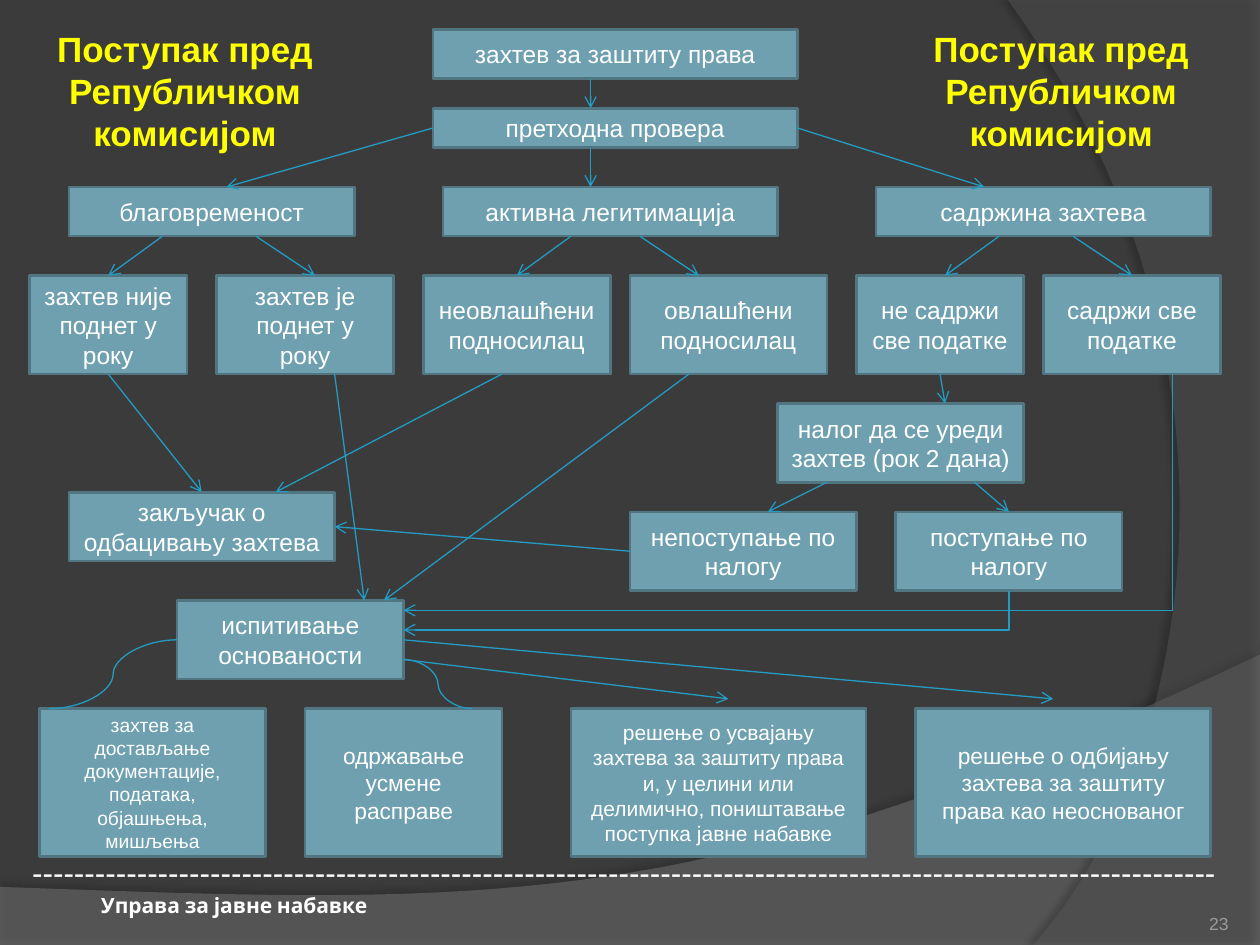
from lxml import etree
from pptx import Presentation
from pptx.dml.color import RGBColor
from pptx.enum.shapes import MSO_CONNECTOR, MSO_SHAPE
from pptx.enum.text import MSO_ANCHOR, MSO_AUTO_SIZE, PP_ALIGN
from pptx.oxml.ns import qn
from pptx.util import Inches, Pt

STRAIGHT, ELBOW, CURVE = MSO_CONNECTOR.STRAIGHT, MSO_CONNECTOR.ELBOW, MSO_CONNECTOR.CURVE
RECTANGLE = MSO_SHAPE.RECTANGLE
TOP, MIDDLE, BOTTOM = MSO_ANCHOR.TOP, MSO_ANCHOR.MIDDLE, MSO_ANCHOR.BOTTOM
LEFT, CENTER, RIGHT = PP_ALIGN.LEFT, PP_ALIGN.CENTER, PP_ALIGN.RIGHT
NO_FIT = MSO_AUTO_SIZE.NONE

WIDTH, HEIGHT = Inches(10), Inches(7.5)
COLUMNS, ROWS = 128, 96
COLORS = {
    "ground": "3B3B3B", "wave": "7F7F7F", "arc": "5E5E5E", "shade": "000000",
    "box": "6EA0B0", "edge": "517682", "link": "239BC2",
    "text": "FFFFFF", "heading": "FFFF00", "number": "9D9B9A",
}
SITES = {"top": 0, "left": 1, "bottom": 2, "right": 3}

STAGES = [
    ((44, 3, 37, 12), [
        ("request", "захтев за заштиту права", (0, 0, 37, 5), 14),
        ("precheck", "претходна провера", (0, 8, 37, 4), 14)]),
    ((3, 19, 37, 19), [
        ("timing", "благовременост", (4, 0, 29, 5), 14),
        ("late", "захтев није поднет у року", (0, 9, 16, 10), 14),
        ("timely", "захтев је поднет у року", (19, 9, 18, 10), 14)]),
    ((43, 19, 41, 19), [
        ("standing", "активна легитимација", (2, 0, 34, 5), 14),
        ("unauthorised", "неовлашћени подносилац", (0, 9, 19, 10), 14),
        ("authorised", "овлашћени подносилац", (21, 9, 20, 10), 14)]),
    ((87, 19, 37, 19), [
        ("content", "садржина захтева", (2, 0, 34, 5), 14),
        ("incomplete", "не садржи све податке", (0, 9, 17, 10), 14),
        ("complete", "садржи све податке", (19, 9, 18, 10), 14)]),
    ((64, 41, 50, 19), [
        ("order", "налог да се уреди захтев (рок 2 дана)", (15, 0, 25, 8), 14),
        ("ignored", "непоступање по налогу", (0, 11, 23, 8), 14),
        ("obeyed", "поступање по налогу", (27, 11, 23, 8), 14)]),
    ((7, 50, 34, 19), [
        ("rejection", "закључак о одбацивању захтева", (0, 0, 27, 7), 14),
        ("review", "испитивање основаности", (11, 11, 23, 8), 14)]),
    ((4, 72, 119, 15), [
        ("documents", "захтев за достављање документације, података, објашњења, мишљења",
         (0, 0, 23, 15), 11),
        ("hearing", "одржавање усмене расправе", (27, 0, 20, 15), 13),
        ("granted", "решење о усвајању захтева за заштиту права и, у целини или "
         "делимично, поништавање поступка јавне набавке", (54, 0, 30, 15), 12),
        ("refused", "решење о одбијању захтева за заштиту права као неоснованог",
         (89, 0, 30, 15), 13)]),
]

ARROWS = [
    (("request", "bottom", 16), ("precheck", "top", 16)),
    (("precheck", "bottom", 16), ("standing", "top", 15)),
    (("precheck", "left", None), ("timing", "top", 16)),
    (("precheck", "right", None), ("content", "top", 11)),
    (("timing", "bottom", 9.5), ("late", "top", None)),
    (("timing", "bottom", 19), ("timely", "top", 10)),
    (("standing", "bottom", 13), ("unauthorised", "top", None)),
    (("standing", "bottom", 20), ("authorised", "top", 7)),
    (("content", "bottom", 12.5), ("incomplete", "top", 9)),
    (("content", "bottom", 20), ("complete", "top", None)),
    (("late", "bottom", None), ("rejection", "top", None)),
    (("unauthorised", "bottom", 8), ("rejection", "top", 21)),
    (("ignored", "left", None), ("rejection", "right", None)),
    (("timely", "bottom", 12), ("review", "top", 19)),
    (("authorised", "bottom", 6), ("review", "top", 21)),
    (("incomplete", "bottom", None), ("order", "top", 17)),
    (("order", "bottom", 5), ("ignored", "top", 14)),
    (("order", "bottom", 20), ("obeyed", "top", None)),
    (("review", "right", 6), ("granted", "above", 16)),
    (("review", "right", None), ("refused", "above", 14)),
]
ELBOWS = [
    (("review", "right", 1), ("complete", "bottom", 13.1)),
    (("review", "right", 3), ("obeyed", "bottom", 11.5)),
]
CURVES = [
    (("review", "right", 6), ("hearing", "top", 17)),
    (("review", "left", 4), ("documents", "top", 1)),
]


def across(columns):
    return round(WIDTH * columns / COLUMNS)


def down(rows):
    return round(HEIGHT * rows / ROWS)


def within(area, cell):
    left, top, width, height = cell
    return across(area[0] + left), down(area[1] + top), across(width), down(height)


def color(name):
    return RGBColor.from_string(COLORS[name])


def apply(target, values):
    for key, value in values.items():
        setattr(target, key, value)


def write(box, text, size, shade="text", font="Arial", bold=False, align=CENTER, **frame):
    apply(box.text_frame, {"word_wrap": True, "auto_size": NO_FIT, **frame})
    para = box.text_frame.paragraphs[0]
    para.alignment = align
    span = para.add_run()
    span.text = text
    apply(span.font, {"name": font, "size": Pt(size), "bold": bold})
    span.font.color.rgb = color(shade)


def bezier(start, first, second, end, steps=40):
    for step in range(steps + 1):
        t = step / steps
        weights = ((1 - t) ** 3, 3 * t * (1 - t) ** 2, 3 * t * t * (1 - t), t ** 3)
        yield tuple(sum(weight * point[axis] for weight, point
                        in zip(weights, (start, first, second, end))) for axis in (0, 1))


def draw_panel(page, area, shares, fill, opacity, shadow):
    left, top, width, height = within((0, 0), area)
    points = [(left + width * x, top + height * y) for x, y in shares]
    builder = page.shapes.build_freeform(*points[0], scale=1.0)
    builder.add_line_segments(points[1:], close=True)
    panel = builder.convert_to_shape()
    panel.fill.solid()
    panel.fill.fore_color.rgb = color(fill)
    panel.line.fill.background()
    panel.shadow.inherit = False
    properties = panel._element.spPr
    tint = properties.find(qn("a:solidFill"))[0]
    etree.SubElement(tint, qn("a:alpha"), val=str(opacity * 1000))
    strength, blur, distance, angle = shadow
    cast = etree.SubElement(properties.find(qn("a:effectLst")), qn("a:outerShdw"),
                            blurRad=str(Pt(blur)), dist=str(Pt(distance)),
                            dir=str(angle * 60000), algn="ctr", rotWithShape="0")
    shade = etree.SubElement(cast, qn("a:srgbClr"), val=COLORS["shade"])
    etree.SubElement(shade, qn("a:alpha"), val=str(strength * 1000))


def draw_backdrop(page):
    page.background.fill.solid()
    page.background.fill.fore_color.rgb = color("ground")
    wave = [(0, 1), (1, 1), *bezier((1, 0), (0.56, 0.91), (0.39, 0.86), (0, 0.8))]
    arc = [(1, 0), (1, 1), *bezier((0.1, 1), (0.68, 0.83), (1.09, 0.4), (0, 0))]
    draw_panel(page, (0, 66.5, 128, 29.5), wave, "wave", 45, (35, 4, 3.5, 270))
    draw_panel(page, (102.4, 0, 25.6, 96), arc, "arc", 40, (45, 4, 4, 180))


def draw_heading(page, area):
    box = page.shapes.add_textbox(*within(area, (0, 0, *area[2:])))
    write(box, "Поступак пред Републичком комисијом", 20, "heading", bold=True,
          vertical_anchor=BOTTOM)


def draw_stage(page, area, nodes):
    boxes = {}
    for name, text, cell, size in nodes:
        box = page.shapes.add_shape(RECTANGLE, *within(area, cell))
        box.shadow.inherit = False
        box.fill.solid()
        box.fill.fore_color.rgb = color("box")
        box.line.color.rgb = color("edge")
        box.line.width = Pt(1.5)
        write(box, text, size, vertical_anchor=MIDDLE)
        boxes[name] = box
    return boxes


def locate(box, side, offset):
    if side in ("left", "right"):
        shift = box.height // 2 if offset is None else down(offset)
        return box.left + (box.width if side == "right" else 0), box.top + shift
    shift = box.width // 2 if offset is None else across(offset)
    drop = {"top": 0, "above": -down(1), "bottom": box.height}[side]
    return box.left + shift, box.top + drop


def draw_link(page, boxes, start, end, kind=STRAIGHT, arrow=None):
    ends = [(boxes[name], side, offset) for name, side, offset in (start, end)]
    points = [value for place in ends for value in locate(*place)]
    link = page.shapes.add_connector(kind, *points)
    for join, (box, side, offset) in zip((link.begin_connect, link.end_connect), ends):
        if offset is None:
            join(box, SITES[side])
    link.line.color.rgb = color("link")
    link.line.width = Pt(0.75)
    properties = link._element.spPr
    if arrow:
        etree.SubElement(properties.find(qn("a:ln")), qn(arrow), type="arrow")
    if kind == ELBOW:
        properties.find(qn("a:prstGeom")).set("prst", "bentConnector2")
    etree.SubElement(properties, qn("a:effectLst"))


def draw_footer(page, area):
    rule, office, number = (page.shapes.add_textbox(*within(area, cell)) for cell in (
        (0, 0, 123.3, 5), (7, 4, 40, 4), (112.2, 3.9, 10.6, 5)))
    write(rule, "-" * 113, 18, align=LEFT, word_wrap=False)
    write(office, "Управа за јавне набавке", 12, font="Cabin", bold=True, align=LEFT,
          vertical_anchor=TOP)
    margins = dict.fromkeys(("margin_left", "margin_top", "margin_right", "margin_bottom"), 0)
    write(number, "23", 10, "number", align=RIGHT, vertical_anchor=BOTTOM, **margins)


def main():
    deck = Presentation()
    deck.slide_width, deck.slide_height = WIDTH, HEIGHT
    page = deck.slides.add_slide(deck.slide_layouts[6])
    draw_backdrop(page)
    for left in (2, 91):
        draw_heading(page, (left, 2, 33.6, 14.2))
    draw_footer(page, (2, 86))
    boxes = {}
    for area, nodes in STAGES:
        boxes.update(draw_stage(page, area, nodes))
    for links, kind, arrow in ((ARROWS, STRAIGHT, "a:tailEnd"),
                               (ELBOWS, ELBOW, "a:headEnd"), (CURVES, CURVE, None)):
        for start, end in links:
            draw_link(page, boxes, start, end, kind, arrow)
    deck.save("out.pptx")


if __name__ == "__main__":
    main()
